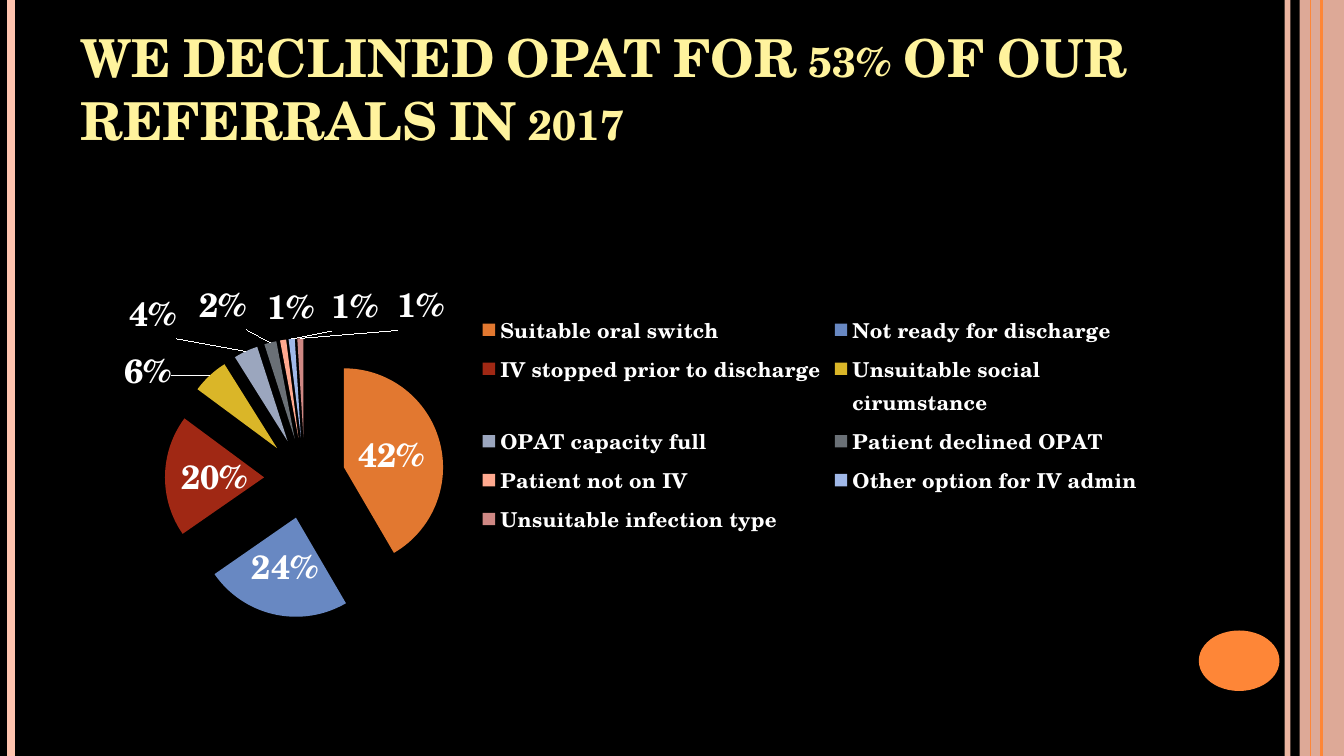
from dataclasses import dataclass

from lxml import etree
from pptx import Presentation
from pptx.chart.data import CategoryChartData
from pptx.dml.color import RGBColor
from pptx.enum.chart import XL_CHART_TYPE, XL_LABEL_POSITION, XL_LEGEND_POSITION
from pptx.enum.shapes import MSO_CONNECTOR, MSO_SHAPE
from pptx.enum.text import MSO_ANCHOR, PP_ALIGN
from pptx.oxml import parse_xml
from pptx.oxml.ns import nsdecls, qn
from pptx.util import Inches, Pt

PIE = XL_CHART_TYPE.PIE_EXPLODED
MID = XL_LABEL_POSITION.CENTER
OUT = XL_LABEL_POSITION.OUTSIDE_END
RIGHT = XL_LEGEND_POSITION.RIGHT
LINE = MSO_CONNECTOR.STRAIGHT
RECT, OVAL = MSO_SHAPE.RECTANGLE, MSO_SHAPE.OVAL
LEFT, BOTTOM = PP_ALIGN.LEFT, MSO_ANCHOR.BOTTOM
WIDE = Inches(10)
HIGH = WIDE * 9 // 16


@dataclass(frozen=True)
class Theme:
    face: str = "TeX Gyre Schola"
    back: str = "000000"
    text: str = "FFFFFF"
    head: str = "FFF39D"
    pale: str = "FEC3AE"
    warm: str = "FE8637"
    big: int = 28
    label: int = 18
    small: int = 11


THEME = Theme()

TITLE = "WE DECLINED OPAT FOR 53% OF OUR REFERRALS IN 2017"
SLICES = [
    ("Suitable oral switch", 42, "E27830", None),
    ("Not ready for discharge", 24, "6888C2", None),
    ("IV stopped prior to discharge", 20, "A02814", None),
    ("Unsuitable social cirumstance", 6, "DAB628", (-0.03, 0.05)),
    ("OPAT capacity full", 4, "9BA6BE", (-0.06, -0.01)),
    ("Patient declined OPAT", 2, "6A7076", (-0.02, -0.01)),
    ("Patient not on IV", 1, "FFA98F", (0.03, 0)),
    ("Other option for IV admin", 1, "A0B8E8", (0.08, 0)),
    ("Unsuitable infection type", 1, "CF8884", (0.11, 0)),
]
RULES = [
    (95.8, THEME.pale, 3, 93),
    (0.8, THEME.pale, 4.5, 100),
    (98.3, THEME.warm, 1.5, 100),
    (97.5, THEME.warm, 0.75, 100),
]


def place(x, y, w, h):
    return [int(side * part / 100) for side, part in
            zip((WIDE, HIGH, WIDE, HIGH), (x, y, w, h))]


def apply(item, values):
    for name, value in values.items():
        setattr(item, name, value)


def style(font, size, color=THEME.text):
    apply(font, {"name": THEME.face, "size": Pt(size), "bold": True})
    font.color.rgb = RGBColor.from_string(color)


def paint(fill, color):
    fill.solid()
    fill.fore_color.rgb = RGBColor.from_string(color)


def fade(shape, alpha):
    color = next(shape._element.spPr.iter(qn("a:srgbClr")))
    etree.SubElement(color, qn("a:alpha")).set("val", str(alpha * 1000))


def add_rule(slide, x, color, width, alpha):
    left, top, _, tall = place(x, 0, 0, 100)
    rule = slide.shapes.add_connector(LINE, left, top, left, tall)
    rule.line.width = Pt(width)
    paint(rule.line.fill, color)
    fade(rule, alpha)
    etree.SubElement(rule._element.spPr, qn("a:effectLst"))


def add_block(slide, kind, box, color, alpha=100):
    block = slide.shapes.add_shape(kind, *place(*box))
    block.shadow.inherit = False
    paint(block.fill, color)
    block.line.fill.background()
    fade(block, alpha)


def add_title(slide, box):
    title = slide.shapes.title
    apply(title, dict(zip(("left", "top", "width", "height"), place(*box))))
    frame = title.text_frame
    frame.text = TITLE
    apply(frame, {"word_wrap": True, "vertical_anchor": BOTTOM})
    frame.paragraphs[0].alignment = LEFT
    run = frame.paragraphs[0].runs[0]
    style(run.font, THEME.big, THEME.head)
    run._r.get_or_add_rPr().set("cap", "small")


def layout(values):
    parts = "".join(f'<c:{name} val="{value}"/>'
                    for name, value in values.items())
    return parse_xml(f"<c:layout {nsdecls('c')}><c:manualLayout>{parts}"
                     "</c:manualLayout></c:layout>")


def set_plot(chart):
    area = chart._chartSpace.chart.plotArea
    for old in area.findall(qn("c:layout")):
        area.remove(old)
    area.insert(0, layout({"layoutTarget": "inner", "xMode": "edge",
                           "yMode": "edge", "x": 0.09, "y": 0.34,
                           "w": 0.27, "h": 0.52}))


def set_legend(chart):
    chart.has_legend = True
    legend = chart.legend
    apply(legend, {"position": RIGHT, "include_in_layout": False})
    style(legend.font, THEME.small)


def move_label(point, shift):
    label = point.data_label
    style(label.font, THEME.label)
    label.position = OUT
    node = label._get_or_add_dLbl()
    node.find(qn("c:idx")).addnext(layout(dict(zip("xy", shift))))
    node.find(qn("c:showVal")).set("val", "0")
    node.find(qn("c:showPercent")).set("val", "1")


def set_labels(series):
    labels = series.data_labels
    apply(labels, {"show_percentage": True, "show_value": False,
                   "number_format": "0%", "number_format_is_linked": False,
                   "position": MID})
    style(labels.font, THEME.label)
    node = labels._element
    for name in ("c:showLeaderLines", "c:leaderLines"):
        for old in node.findall(qn(name)):
            node.remove(old)
    etree.SubElement(node, qn("c:showLeaderLines")).set("val", "1")
    node.append(parse_xml(
        f"<c:leaderLines {nsdecls('c', 'a')}><c:spPr><a:ln w='0'><a:solidFill>"
        f"<a:srgbClr val='{THEME.text}'/></a:solidFill></a:ln></c:spPr>"
        "</c:leaderLines>"))


def add_pie(slide, box):
    data = CategoryChartData()
    data.categories = [row[0] for row in SLICES]
    data.add_series("Series 1", [row[1] for row in SLICES])
    chart = slide.shapes.add_chart(PIE, *place(*box), data).chart
    chart.has_title = False
    style(chart.font, THEME.label)
    plot = chart.plots[0]
    plot.vary_by_categories = True
    series = plot.series[0]
    burst = series._element.find(qn("c:explosion"))
    if burst is not None:
        burst.set("val", "41")
    set_labels(series)
    for spot, (_, _, color, shift) in enumerate(SLICES):
        point = series.points[spot]
        paint(point.format.fill, color)
        point.format.line.fill.background()
        if shift:
            move_label(point, shift)
    set_plot(chart)
    set_legend(chart)


def main():
    deck = Presentation()
    apply(deck, {"slide_width": WIDE, "slide_height": HIGH})
    slide = deck.slides.add_slide(deck.slide_layouts[5])
    paint(slide.background.fill, THEME.back)
    add_block(slide, RECT, (96.7, 0, 3.3, 100), THEME.pale, 87)
    for rule in RULES:
        add_rule(slide, *rule)
    add_block(slide, OVAL, (89.2, 83.4, 6, 8), THEME.warm)
    add_title(slide, (5, 4.1, 81.67, 16.7))
    add_pie(slide, (4.3, 20.6, 81.67, 71.1))
    deck.save("out.pptx")


if __name__ == "__main__":
    main()
